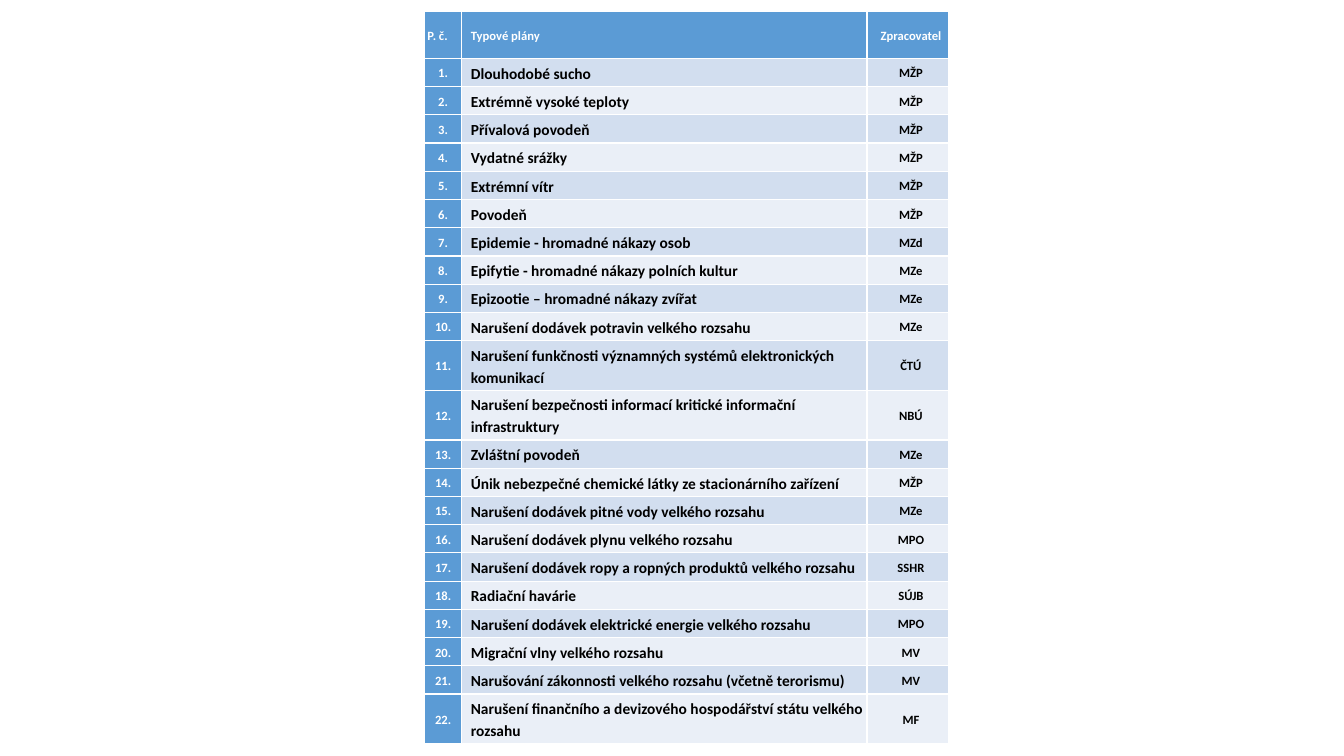
from pptx import Presentation
from pptx.dml.color import RGBColor
from pptx.enum.text import MSO_ANCHOR as Anchor, PP_ALIGN as Align
from pptx.util import Inches, Pt

FONT = "Calibri"
BLUE, BAND_DARK, BAND_LIGHT = "5B9BD5", "D2DEEF", "EAEFF7"
WHITE, BLACK = "FFFFFF", "000000"

# Table grid, in inches
LEFT, TOP = 4.21, 0.11
COLUMNS = [0.37, 4.02, 0.81]
ROW, TALL_ROW = 0.28, 0.47
TWO_LINE_PLANS = {11, 12, 22}

HEADER = ["P. č.", "Typové plány", "Zpracovatel"]
PLANS = [
    ("Dlouhodobé sucho", "MŽP"),
    ("Extrémně vysoké teploty", "MŽP"),
    ("Přívalová povodeň", "MŽP"),
    ("Vydatné srážky", "MŽP"),
    ("Extrémní vítr", "MŽP"),
    ("Povodeň", "MŽP"),
    ("Epidemie - hromadné nákazy osob", "MZd"),
    ("Epifytie - hromadné nákazy polních kultur", "MZe"),
    ("Epizootie – hromadné nákazy zvířat", "MZe"),
    ("Narušení dodávek potravin velkého rozsahu", "MZe"),
    ("Narušení funkčnosti významných systémů elektronických komunikací", "ČTÚ"),
    ("Narušení bezpečnosti informací kritické informační infrastruktury", "NBÚ"),
    ("Zvláštní povodeň", "MZe"),
    ("Únik nebezpečné chemické látky ze stacionárního zařízení", "MŽP"),
    ("Narušení dodávek pitné vody velkého rozsahu", "MZe"),
    ("Narušení dodávek plynu velkého rozsahu", "MPO"),
    ("Narušení dodávek ropy a ropných produktů velkého rozsahu", "SSHR"),
    ("Radiační havárie", "SÚJB"),
    ("Narušení dodávek elektrické energie velkého rozsahu", "MPO"),
    ("Migrační vlny velkého rozsahu", "MV"),
    ("Narušování zákonnosti velkého rozsahu (včetně terorismu)", "MV"),
    ("Narušení finančního a devizového hospodářství státu velkého rozsahu", "MF"),
]


def rgb(color):
    return RGBColor.from_string(color)


def write(cell, text, size=9, color=BLACK, align=Align.LEFT, indent=0):
    p = cell.text_frame.paragraphs[0]
    p.alignment = align
    p.line_spacing = 1.15
    if indent:
        pPr = p._p.get_or_add_pPr()
        pPr.set("marL", str(Inches(indent)))
        pPr.set("indent", "0")
    r = p.add_run()
    r.text = text
    r.font.name, r.font.size, r.font.bold = FONT, Pt(size), True
    r.font.color.rgb = rgb(color)


def style_cell(cell, fill, left_margin):
    cell.fill.solid()
    cell.fill.fore_color.rgb = rgb(fill)
    cell.vertical_anchor = Anchor.MIDDLE
    cell.margin_left = Inches(left_margin)
    cell.margin_top = cell.margin_right = cell.margin_bottom = Inches(0.03)


def fill_row(table, number, texts):
    header = number == 0
    band = BLUE if header else BAND_DARK if number % 2 else BAND_LIGHT
    for col, text in enumerate(texts):
        cell = table.cell(number, col)
        first, plan = col == 0, col == 1
        style_cell(cell, BLUE if first else band, 0.03 if first else 0.05)
        write(cell, text,
              size=11 if plan and not header else 9,
              color=WHITE if first or header else BLACK,
              align=Align.LEFT if plan or (first and header) else Align.CENTER,
              indent=0 if first else 0.04)


def add_plan_table(slide):
    rows = [HEADER] + [(f"{n}.", *plan) for n, plan in enumerate(PLANS, 1)]
    heights = [TALL_ROW if n == 0 or n in TWO_LINE_PLANS else ROW
               for n in range(len(rows))]
    table = slide.shapes.add_table(
        len(rows), len(COLUMNS), Inches(LEFT), Inches(TOP),
        Inches(sum(COLUMNS)), Inches(sum(heights))).table
    # The default table style supplies the white rules
    table.first_col = True
    for column, width in zip(table.columns, COLUMNS):
        column.width = Inches(width)
    for number, (texts, height) in enumerate(zip(rows, heights)):
        table.rows[number].height = Inches(height)
        fill_row(table, number, texts)


def main():
    prs = Presentation()
    prs.slide_width, prs.slide_height = Inches(13.33), Inches(7.5)
    slide = prs.slides.add_slide(prs.slide_layouts[6])
    add_plan_table(slide)
    prs.save("out.pptx")


if __name__ == "__main__":
    main()
